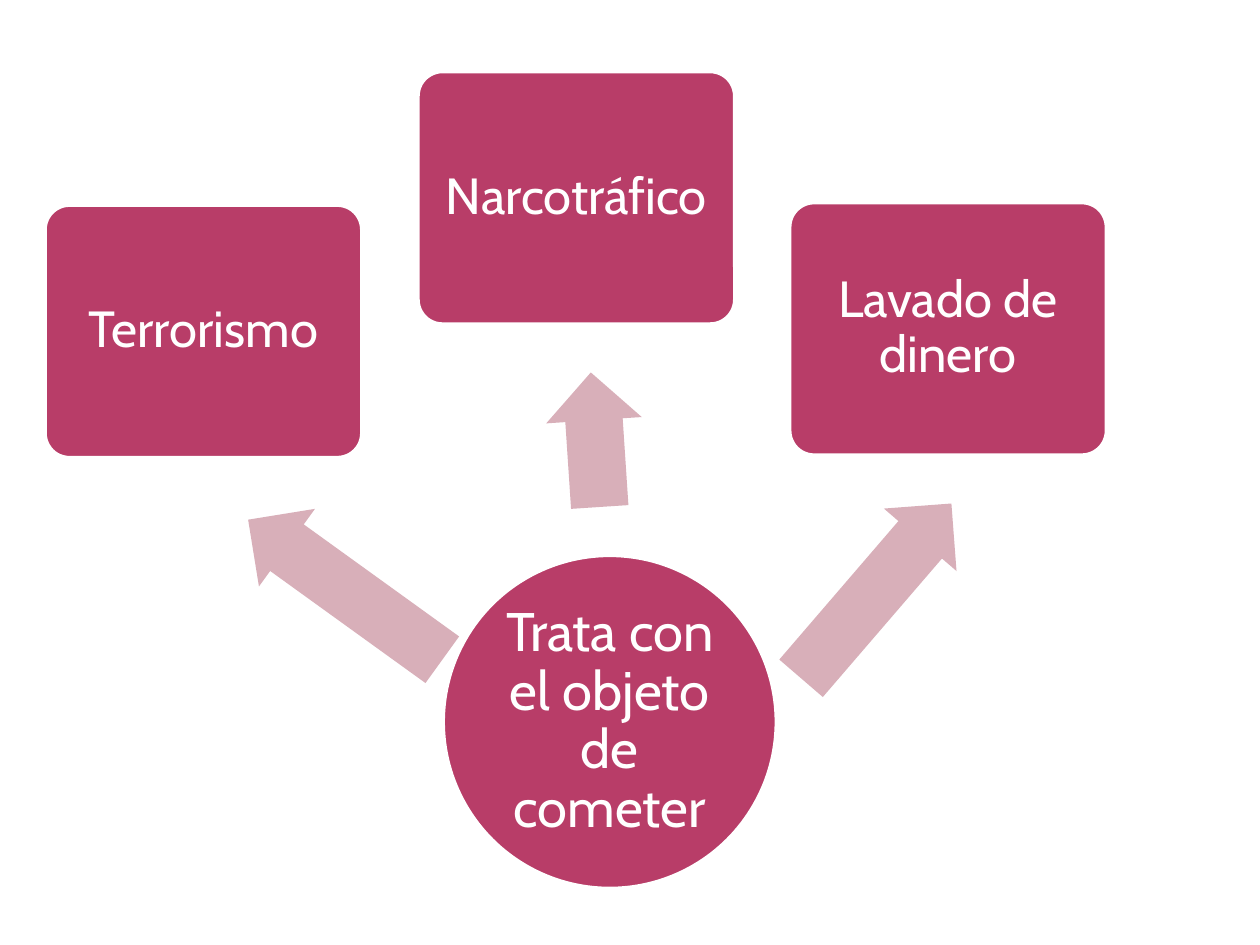
from pptx import Presentation
from pptx.dml.color import RGBColor
from pptx.enum.shapes import MSO_SHAPE as SHAPE
from pptx.enum.text import MSO_ANCHOR, PP_ALIGN
from pptx.util import Inches, Pt

MAGENTA = RGBColor(0xB8, 0x3D, 0x68)
PINK = RGBColor(0xD8, 0xAF, 0xB9)
WHITE = RGBColor(0xFF, 0xFF, 0xFF)

prs = Presentation()
prs.slide_width, prs.slide_height = Inches(10), Inches(7.5)
slide = prs.slides.add_slide(prs.slide_layouts[6])


def add_node(kind, left, top, width, height, text, size, inset):
    node = slide.shapes.add_shape(
        kind, Inches(left), Inches(top), Inches(width), Inches(height))
    node.shadow.inherit = False
    node.fill.solid()
    node.fill.fore_color.rgb = MAGENTA
    node.line.color.rgb = WHITE
    node.line.width = Pt(3.15)
    frame = node.text_frame
    frame.word_wrap = True
    frame.vertical_anchor = MSO_ANCHOR.MIDDLE
    frame.margin_left = frame.margin_right = Inches(inset)
    frame.margin_top = frame.margin_bottom = Inches(inset)
    paragraph = frame.paragraphs[0]
    paragraph.text = text
    paragraph.alignment = PP_ALIGN.CENTER
    paragraph.line_spacing = 0.9
    paragraph.font.name = "Cabin"
    paragraph.font.size = Pt(size)
    paragraph.font.color.rgb = WHITE
    return node


# Central circle
add_node(SHAPE.OVAL, 3.51, 4.4, 2.66, 2.66,
         "Trata con el objeto de cometer", 31, 0.02)

# Crimes, each with the arrow leading to it: arrow left, top, length, angle
crimes = [
    ("Terrorismo", 0.35, 1.62, (1.79, 4.3, 1.9, 215.8)),
    ("Narcotráfico", 3.31, 0.56, (4.19, 3.11, 1.07, 266.2)),
    ("Lavado de dinero", 6.26, 1.6, (6.04, 4.31, 1.83, 310.7)),
]
for crime, left, top, (arrow_left, arrow_top, length, angle) in crimes:
    arrow = slide.shapes.add_shape(
        SHAPE.RIGHT_ARROW, Inches(arrow_left), Inches(arrow_top),
        Inches(length), Inches(0.76))
    arrow.shadow.inherit = False
    arrow.adjustments[0] = 0.6
    arrow.adjustments[1] = 0.5
    arrow.rotation = angle
    arrow.fill.solid()
    arrow.fill.fore_color.rgb = PINK
    arrow.line.fill.background()

    box = add_node(SHAPE.ROUNDED_RECTANGLE, left, top, 2.53, 2.02,
                   crime, 29, 0.06)
    box.adjustments[0] = 0.1

prs.save("out.pptx")
